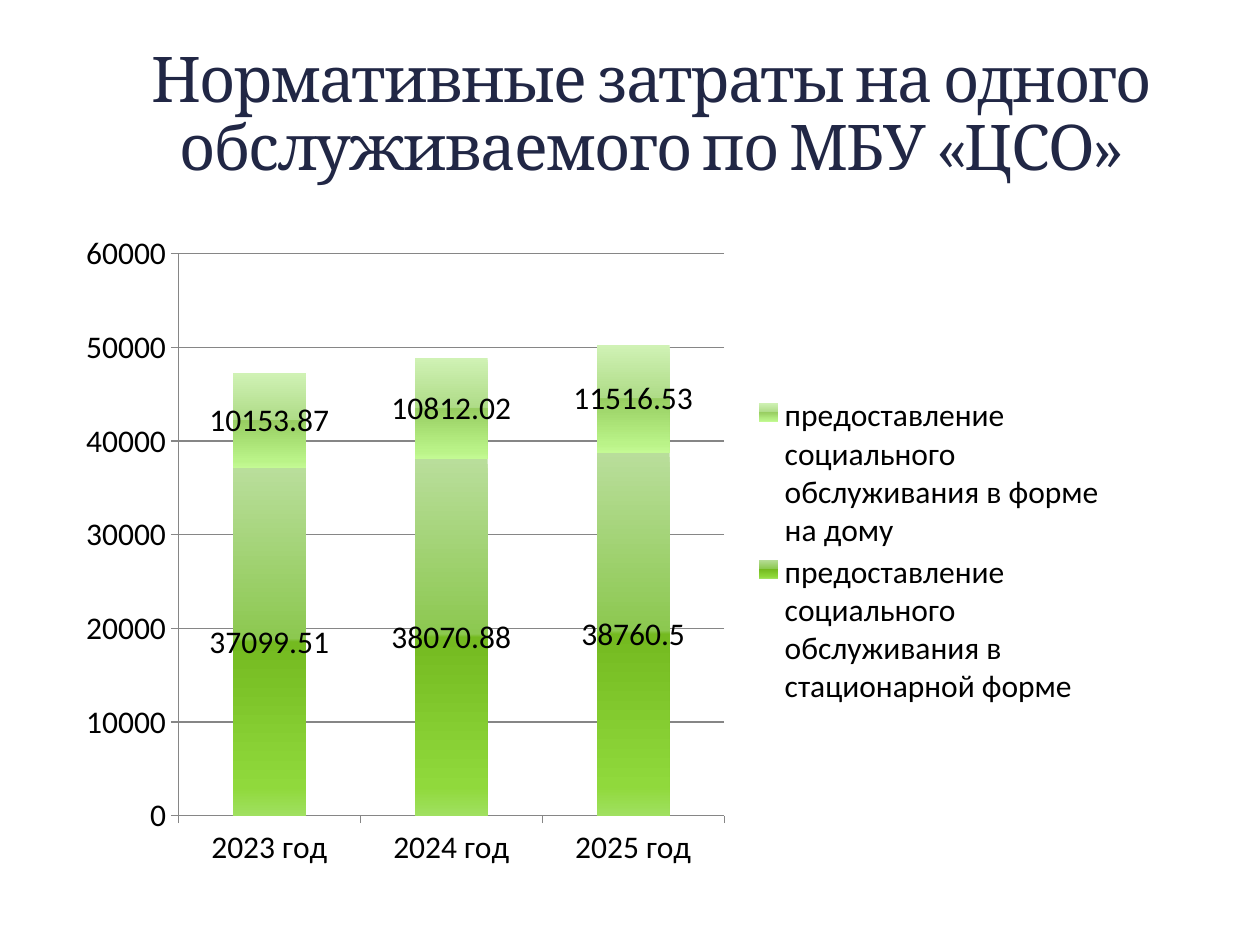
from lxml.etree import SubElement
from pptx import Presentation
from pptx.chart.data import CategoryChartData
from pptx.dml.color import RGBColor
from pptx.enum.chart import XL_CHART_TYPE, XL_LABEL_POSITION, XL_LEGEND_POSITION, XL_TICK_MARK
from pptx.enum.text import MSO_ANCHOR, PP_ALIGN
from pptx.oxml import parse_xml
from pptx.oxml.ns import nsdecls, qn
from pptx.util import Inches, Pt

NAVY = RGBColor(0x21, 0x27, 0x45)
BLACK = RGBColor(0x00, 0x00, 0x00)
GRAY = RGBColor(0x86, 0x86, 0x86)
DARK_GREEN = [(0, RGBColor(0xB9, 0xDE, 0x9B)), (49, RGBColor(0x8C, 0xC8, 0x50)),
              (50, RGBColor(0x74, 0xBA, 0x20)), (92, RGBColor(0x90, 0xD9, 0x3C)),
              (100, RGBColor(0xA0, 0xE0, 0x60))]
LIGHT_GREEN = [(0, RGBColor(0xD0, 0xF2, 0xB5)), (49, RGBColor(0xAF, 0xDC, 0x88)),
               (50, RGBColor(0x98, 0xCE, 0x62)), (92, RGBColor(0xBA, 0xF3, 0x88)),
               (100, RGBColor(0xC4, 0xFA, 0x94))]

YEARS = ["2023 год", "2024 год", "2025 год"]
COSTS = [
    ("предоставление социального обслуживания в стационарной форме",
     (37099.51, 38070.88, 38760.5), DARK_GREEN),
    ("предоставление социального обслуживания в форме на дому",
     (10153.87, 10812.02, 11516.53), LIGHT_GREEN),
]


class SlideBuilder:
    title_font = "Cambria"
    chart_font = "Calibri"

    def __init__(self, prs):
        self.s = prs.slides.add_slide(prs.slide_layouts[5])

    def title(self, text, left, top, width, height):
        sp = self.s.shapes.title
        sp.left, sp.top, sp.width, sp.height = map(Inches, (left, top, width, height))
        tf = sp.text_frame
        tf.text = text
        tf.word_wrap = True
        tf.vertical_anchor = MSO_ANCHOR.MIDDLE
        p = tf.paragraphs[0]
        p.alignment = PP_ALIGN.CENTER
        p.line_spacing = 0.9
        p._p.get_or_add_pPr().set("marL", str(Inches(0.28)))
        for r in p.runs:
            r.font.name = self.title_font
            r.font.size = Pt(36)
            r.font.color.rgb = NAVY
            r._r.get_or_add_rPr().set("spc", "-100")

    def gradient(self, series, stops):
        series.format.fill.gradient()
        fill = series.format.fill._xPr.find(qn("a:gradFill"))
        colors = "".join(f'<a:gs pos="{pos * 1000}"><a:srgbClr val="{color}"/></a:gs>'
                         for pos, color in stops)
        fill.getparent().replace(fill, parse_xml(
            f'<a:gradFill {nsdecls("a")} rotWithShape="1"><a:gsLst>{colors}</a:gsLst>'
            '<a:lin ang="5400000" scaled="0"/></a:gradFill>'))

    def place(self, layout, x, y, w, h, inner=False):
        for child in list(layout):
            layout.remove(child)
        manual = SubElement(layout, qn("c:manualLayout"))
        values = [("layoutTarget", "inner")] if inner else []
        values += [("xMode", "edge"), ("yMode", "edge"), ("x", x), ("y", y), ("w", w), ("h", h)]
        for tag, value in values:
            SubElement(manual, qn(f"c:{tag}")).set("val", str(value))

    def stacked_chart(self, years, costs, left, top, width, height):
        data = CategoryChartData()
        data.categories = years
        for name, values, _ in costs:
            data.add_series(name, values)
        chart = self.s.shapes.add_chart(XL_CHART_TYPE.COLUMN_STACKED, Inches(left), Inches(top),
                                        Inches(width), Inches(height), data).chart
        chart.has_title = False
        chart.font.name = self.chart_font
        chart.font.size = Pt(18)
        chart.font.color.rgb = BLACK
        plot = chart.plots[0]
        plot.gap_width = 150
        plot.overlap = 100
        plot.vary_by_categories = False
        for series, (_, _, stops) in zip(plot.series, costs):
            self.gradient(series, stops)
            labels = series.data_labels
            labels.show_value = True
            labels.position = XL_LABEL_POSITION.CENTER
        for axis in (chart.category_axis, chart.value_axis):
            axis.major_tick_mark = XL_TICK_MARK.OUTSIDE
            axis.format.line.color.rgb = GRAY
        axis = chart.value_axis
        axis.minimum_scale, axis.maximum_scale, axis.major_unit = 0, 60000, 10000
        axis.has_major_gridlines = True
        axis.major_gridlines.format.line.color.rgb = GRAY
        chart.has_legend = True
        chart.legend.position = XL_LEGEND_POSITION.RIGHT
        chart.legend.include_in_layout = False
        area = chart._chartSpace.chart.plotArea
        self.place(area.get_or_add_layout() if hasattr(area, "get_or_add_layout")
                   else self.new_layout(area), 0.11, 0.05, 0.52, 0.85, inner=True)
        self.place(self.new_layout(chart.legend._element), 0.65, 0.26, 0.35, 0.48)

    def new_layout(self, element):
        layout = element.find(qn("c:layout"))
        if layout is None:
            layout = parse_xml(f'<c:layout {nsdecls("c")}/>')
            position = element.find(qn("c:legendPos"))
            element.insert(0 if position is None else 1, layout)
        return layout


def main():
    prs = Presentation()
    prs.slide_width, prs.slide_height = Inches(10), Inches(7.5)
    slide = SlideBuilder(prs)
    slide.title("Нормативные затраты на одного\vобслуживаемого по МБУ «ЦСО»", 0.5, 0.3, 9.07, 1.25)
    slide.stacked_chart(YEARS, COSTS, 0.5, 1.75, 8.33, 5.25)
    prs.save("out.pptx")


if __name__ == "__main__":
    main()
